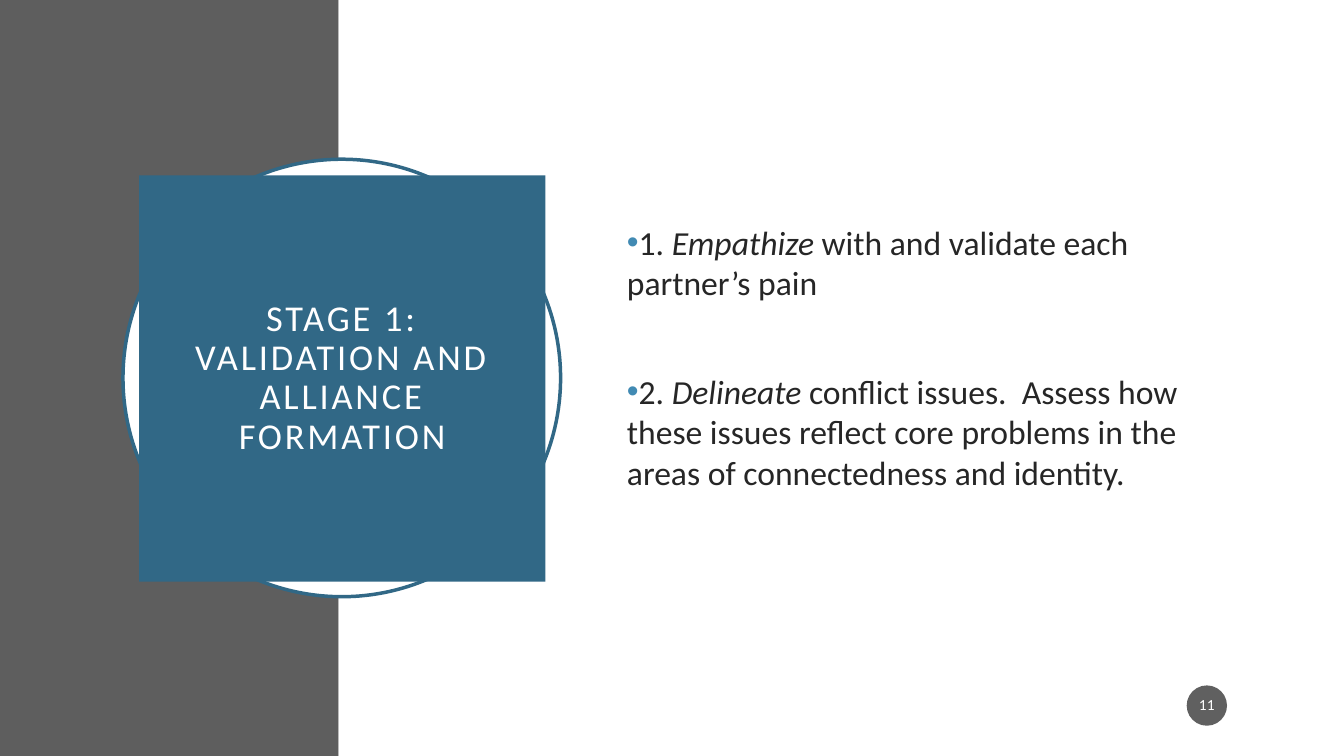
"""Build the slide on stage 1, validation and alliance formation."""
from lxml import etree
from pptx import Presentation
from pptx.dml.color import RGBColor
from pptx.enum.shapes import MSO_SHAPE
from pptx.enum.text import MSO_ANCHOR, MSO_AUTO_SIZE, PP_ALIGN
from pptx.oxml.ns import qn
from pptx.util import Inches, Pt

RECTANGLE, OVAL = MSO_SHAPE.RECTANGLE, MSO_SHAPE.OVAL
MIDDLE, CENTER = MSO_ANCHOR.MIDDLE, PP_ALIGN.CENTER
NO_AUTOFIT = MSO_AUTO_SIZE.NONE

WHITE = RGBColor(0xFF, 0xFF, 0xFF)
GRAY = RGBColor(0x5E, 0x5E, 0x5E)
BLUE = RGBColor(0x31, 0x68, 0x86)
BULLET_BLUE = RGBColor(0x41, 0x8A, 0xB3)
INK = RGBColor(0x26, 0x26, 0x26)
BADGE = RGBColor(0x1D, 0x1D, 0x1D)

STEPS = [
    ("1. ", "Empathize ", "with and validate each partner’s pain"),
    ("2. ", "Delineate ", "conflict issues.  Assess how these issues reflect core "
     "problems in the areas of connectedness and identity."),
]


class StageSlide:
    """Hold the text style and the slide, and draw each kind of element."""

    font_name = "Calibri"

    def __init__(self, presentation):
        self.slide = presentation.slides.add_slide(presentation.slide_layouts[5])

    def shape(self, kind, left, top, width, height, fill, outline=None, alpha=None):
        """Draw a filled preset shape."""
        shape = self.slide.shapes.add_shape(
            kind, Inches(left), Inches(top), Inches(width), Inches(height))
        shape.shadow.inherit = False
        shape.fill.solid()
        shape.fill.fore_color.rgb = fill
        if alpha:
            color = shape._element.spPr.find(qn("a:solidFill"))[0]
            etree.SubElement(color, qn("a:alpha"), val=str(alpha * 1000))
        if outline:
            shape.line.color.rgb = outline
            shape.line.width = Pt(2.5)
        else:
            shape.line.fill.background()
        return shape

    def frame(self, shape, side, top, bottom):
        """Set wrapping, anchoring and insets, and return the text frame."""
        frame = shape.text_frame
        frame.word_wrap = True
        frame.auto_size = NO_AUTOFIT
        frame.vertical_anchor = MIDDLE
        frame.margin_left = frame.margin_right = Inches(side)
        frame.margin_top, frame.margin_bottom = Inches(top), Inches(bottom)
        return frame

    def style(self, paragraph, size, color):
        """Set the font of a paragraph."""
        font = paragraph.font
        font.name, font.size = self.font_name, Pt(size)
        font.color.rgb = color

    def label(self, shape, text, size, side, edge):
        """Write one centred white paragraph in a shape."""
        paragraph = self.frame(shape, side, edge, edge).paragraphs[0]
        paragraph.text = text
        paragraph.alignment = CENTER
        paragraph.line_spacing = 0.9
        self.style(paragraph, size, WHITE)
        return paragraph

    def title(self, text, left, top, width, height):
        """Turn the title placeholder into a filled block in front."""
        title = self.slide.shapes.title
        title.left, title.top = Inches(left), Inches(top)
        title.width, title.height = Inches(width), Inches(height)
        title.fill.solid()
        title.fill.fore_color.rgb = BLUE
        paragraph = self.label(title, text, 26, 0.2, 0.2)
        paragraph._p.pPr.find(qn("a:defRPr")).set("spc", "200")
        self.slide.shapes._spTree.append(title._element)

    def bullets(self, steps, left, top, width, height):
        """Write bulleted steps whose second run is italic."""
        box = self.slide.shapes.add_textbox(
            Inches(left), Inches(top), Inches(width), Inches(height))
        frame = self.frame(box, 0.1, 0.05, 0.46)
        for index, step in enumerate(steps):
            paragraph = frame.add_paragraph() if index else frame.paragraphs[0]
            paragraph.space_before = Pt(49 if index else 0)
            properties = paragraph._p.get_or_add_pPr()
            properties.set("marL", "0")
            properties.set("indent", str(-Inches(0.25)))
            bullet_color = etree.SubElement(properties, qn("a:buClr"))
            etree.SubElement(bullet_color, qn("a:srgbClr"), val=str(BULLET_BLUE))
            etree.SubElement(properties, qn("a:buFont"), typeface="Arial")
            etree.SubElement(properties, qn("a:buChar"), char="•")
            self.style(paragraph, 24, INK)
            for position, text in enumerate(step):
                run = paragraph.add_run()
                run.text = text
                run.font.italic = position == 1


def main():
    """Draw the slide and save it."""
    presentation = Presentation()
    presentation.slide_width, presentation.slide_height = Inches(13.33), Inches(7.5)
    stage = StageSlide(presentation)
    stage.shape(RECTANGLE, 0, 0, 3.36, 7.5, GRAY)
    stage.shape(RECTANGLE, 3.36, 0, 9.97, 7.5, WHITE)
    stage.shape(OVAL, 1.22, 1.58, 4.34, 4.34, WHITE, outline=BLUE)
    stage.title("STAGE 1: VALIDATION AND ALLIANCE FORMATION", 1.38, 1.74, 4.03, 4.03)
    stage.bullets(STEPS, 6.12, 1.53, 6.23, 4.43)
    page_badge = stage.shape(OVAL, 11.77, 6.8, 0.4, 0.4, BADGE, alpha=70)
    stage.label(page_badge, "11", 11, 0.02, 0.05)
    presentation.save("out.pptx")


if __name__ == "__main__":
    main()
